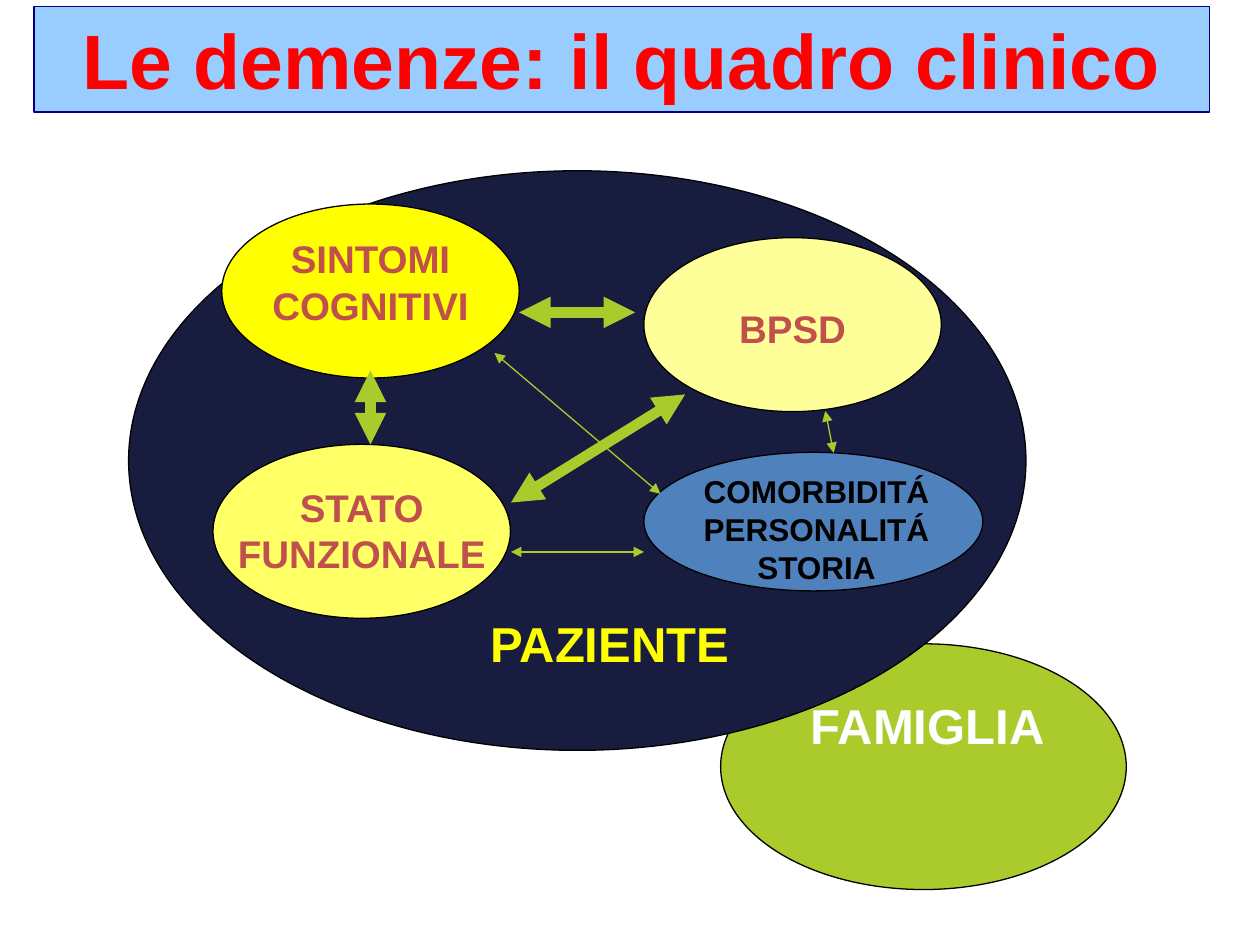
from lxml.etree import SubElement
from pptx import Presentation
from pptx.dml.color import RGBColor
from pptx.enum.shapes import MSO_CONNECTOR, MSO_SHAPE
from pptx.enum.text import MSO_ANCHOR, PP_ALIGN
from pptx.oxml.ns import qn
from pptx.util import Pt

BLACK = RGBColor(0x00, 0x00, 0x00)
WHITE = RGBColor(0xFF, 0xFF, 0xFF)
RED = RGBColor(0xFF, 0x00, 0x00)
BRICK = RGBColor(0xC0, 0x50, 0x4D)
GREEN = RGBColor(0xAA, 0xCB, 0x2B)
NIGHT = RGBColor(0x18, 0x1C, 0x3F)
BLUE = RGBColor(0x4F, 0x81, 0xBD)
SKY = RGBColor(0x99, 0xCC, 0xFF)
NAVY = RGBColor(0x00, 0x00, 0x80)
YELLOW = RGBColor(0xFF, 0xFF, 0x00)
LEMON = RGBColor(0xFF, 0xFF, 0x66)
CREAM = RGBColor(0xFF, 0xFF, 0x99)

FONT = "Arial"
LABEL_WIDTH = 170
THIN, THICK = 0.75, 6

# Content: lengths in points
TITLE = "Le demenze: il quadro clinico"
TITLE_BOX = (19.5, 3.6, 671.8, 60.5)

# Ellipses, back to front: left, top, width, height, fill
ELLIPSES = [
    (411.8, 367.9, 231.8, 140.4, GREEN),   # family
    (73.5, 97.6, 512.8, 331.2, NIGHT),     # patient
    (367.9, 258.5, 193.7, 79.2, BLUE),     # comorbidity
    (367.9, 135.8, 170, 99.4, CREAM),      # BPSD
    (121.7, 253.9, 170, 99.4, LEMON),      # functional state
    (126.7, 116.6, 170, 99.4, YELLOW),     # cognitive symptoms
]

# Labels: lines, left, top, height, size, colour
LABELS = [
    (["SINTOMI COGNITIVI"], 126.7, 131, 59.8, 22, BRICK),
    (["STATO FUNZIONALE"], 121.7, 272.9, 59.8, 22, BRICK),
    (["BPSD"], 367.9, 170.6, 33.8, 22, BRICK),
    (["COMORBIDITÁ", "PERSONALITÁ", "STORIA"], 381.6, 266.4, 72, 18, BLACK),
    (["PAZIENTE"], 263.5, 347, 41, 28, YELLOW),
    (["FAMIGLIA"], 445, 393.8, 41, 28, WHITE),
]

# Double arrows: start x, start y, end x, end y, width
ARROWS = [
    (296.6, 178.5, 363, 178.5, THICK),    # cognitive - BPSD
    (292, 287.2, 391.5, 225.4, THICK),    # functional - BPSD
    (211.7, 254, 211.7, 211.7, THICK),    # functional - cognitive
    (292, 315.4, 368, 315.4, THIN),       # functional - comorbidity
    (282.6, 201.7, 377.4, 282.2, THIN),   # cognitive - comorbidity
    (476.4, 258.8, 471.6, 234.9, THIN),   # comorbidity - BPSD
]


def add_outlined(slide, kind, box, fill, outline):
    shape = slide.shapes.add_shape(kind, *map(Pt, box))
    shape.shadow.inherit = False
    shape.fill.solid()
    shape.fill.fore_color.rgb = fill
    shape.line.color.rgb = outline
    shape.line.width = Pt(THIN)
    return shape


def write(frame, lines, size, color):
    frame.word_wrap = True
    for i, line in enumerate(lines):
        paragraph = frame.add_paragraph() if i else frame.paragraphs[0]
        paragraph.alignment = PP_ALIGN.CENTER
        run = paragraph.add_run()
        run.text = line
        run.font.name = FONT
        run.font.size = Pt(size)
        run.font.bold = True
        run.font.color.rgb = color


def add_double_arrow(slide, x1, y1, x2, y2, width):
    arrow = slide.shapes.add_connector(
        MSO_CONNECTOR.STRAIGHT, Pt(x1), Pt(y1), Pt(x2), Pt(y2))
    arrow.line.color.rgb = GREEN
    arrow.line.width = Pt(width)
    properties = arrow.line._get_or_add_ln()
    for end in ("a:headEnd", "a:tailEnd"):
        SubElement(properties, qn(end), type="triangle")
    SubElement(arrow._element.spPr, qn("a:effectLst"))


def main():
    deck = Presentation()
    deck.slide_width, deck.slide_height = Pt(720), Pt(540)
    slide = deck.slides.add_slide(deck.slide_layouts[6])

    # Ellipses
    for *box, fill in ELLIPSES:
        add_outlined(slide, MSO_SHAPE.OVAL, box, fill, BLACK)

    # Arrows between the four areas
    for arrow in ARROWS:
        add_double_arrow(slide, *arrow)

    # Labels
    for lines, left, top, height, size, color in LABELS:
        label = slide.shapes.add_textbox(
            Pt(left), Pt(top), Pt(LABEL_WIDTH), Pt(height))
        write(label.text_frame, lines, size, color)

    # Title bar
    title = add_outlined(slide, MSO_SHAPE.RECTANGLE, TITLE_BOX, SKY, NAVY)
    title.text_frame.vertical_anchor = MSO_ANCHOR.MIDDLE
    write(title.text_frame, [TITLE], 44, RED)

    deck.save("out.pptx")


if __name__ == "__main__":
    main()
